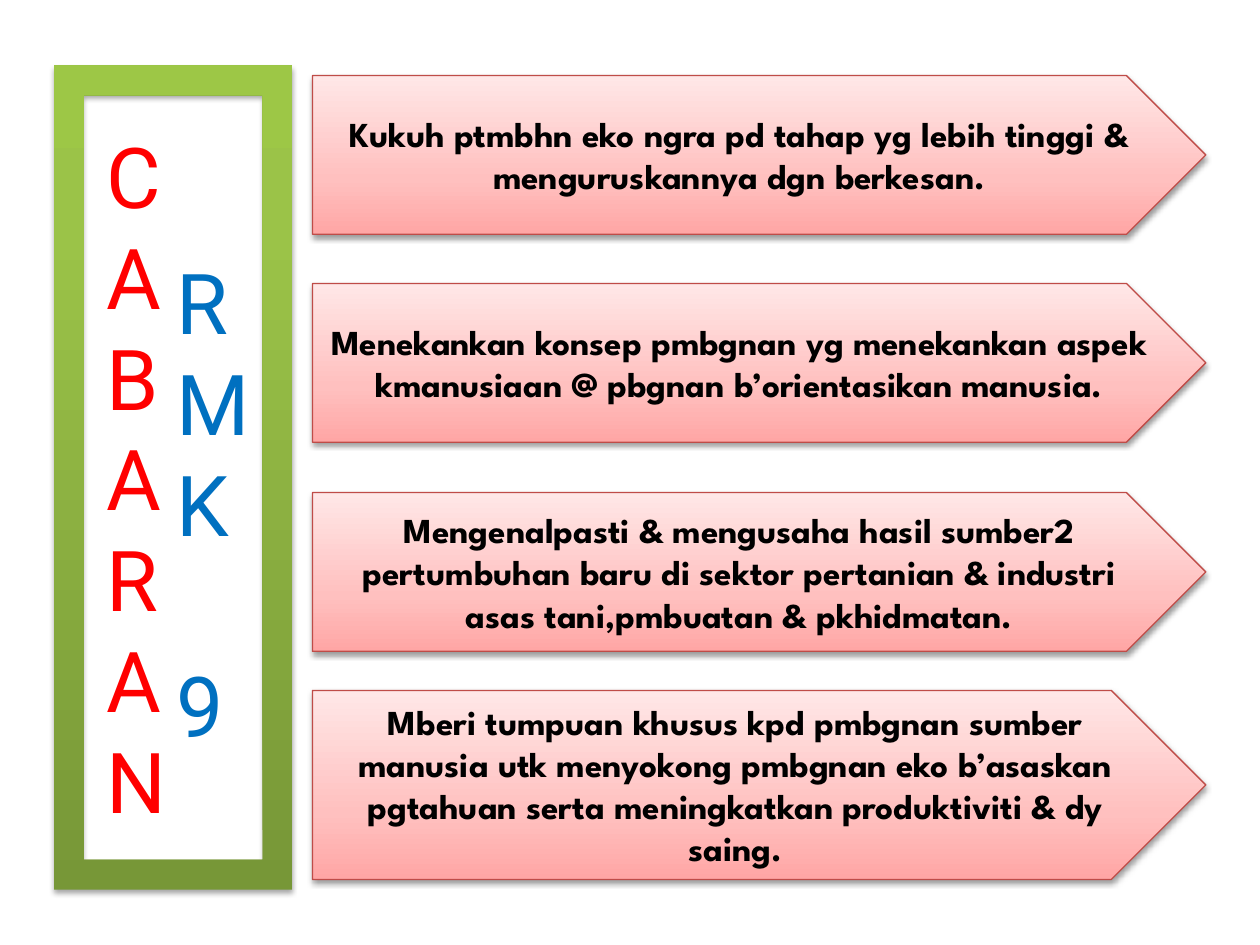
from copy import deepcopy

from lxml import etree
from pptx import Presentation
from pptx.dml.color import RGBColor
from pptx.enum.shapes import MSO_SHAPE
from pptx.enum.text import MSO_ANCHOR, MSO_AUTO_SIZE, PP_ALIGN
from pptx.oxml.ns import qn
from pptx.util import Inches, Pt

FRAME = MSO_SHAPE.FRAME
PENTAGON = MSO_SHAPE.PENTAGON
MIDDLE = MSO_ANCHOR.MIDDLE
GROW = MSO_AUTO_SIZE.SHAPE_TO_FIT_TEXT
CENTER = PP_ALIGN.CENTER

BLACK = RGBColor(0x00, 0x00, 0x00)
RED = RGBColor(0xFF, 0x00, 0x00)
BLUE = RGBColor(0x00, 0x70, 0xC0)
OUTLINE = RGBColor(0xBF, 0x4C, 0x48)
GREENS = [
    (0, RGBColor(0x77, 0x97, 0x37)),
    (0.8, RGBColor(0x9B, 0xC3, 0x48)),
    (1, RGBColor(0x9D, 0xC7, 0x46)),
]
PINKS = [
    (0, RGBColor(0xFF, 0xA6, 0xA5)),
    (0.35, RGBColor(0xFF, 0xC0, 0xBF)),
    (1, RGBColor(0xFF, 0xE7, 0xE7)),
]

LETTER_FONT = "Roboto"
CHALLENGE_FONT = "League Spartan"
LETTER_LINE = Pt(57.5)

CHALLENGES = [
    (0.6, 1.26, "Kukuh ptmbhn eko ngra pd tahap yg lebih tinggi & "
                "menguruskannya dgn berkesan."),
    (2.25, 1.26, "Menekankan konsep pmbgnan yg menekankan aspek "
                 "kmanusiaan @ pbgnan b’orientasikan manusia."),
    (3.91, 1.26, "Mengenalpasti & mengusaha hasil sumber2 pertumbuhan baru "
                 "di sektor pertanian & industri asas tani,pmbuatan & "
                 "pkhidmatan."),
    (5.48, 1.5, "Mberi tumpuan khusus kpd pmbgnan sumber manusia utk "
                "menyokong pmbgnan eko b’asaskan pgtahuan serta "
                "meningkatkan produktiviti & dy saing."),
]


def set_gradient(sp, stops):
    sp.fill.gradient()
    sp.fill.gradient_angle = 90
    gs_lst = sp._element.spPr.find(".//" + qn("a:gsLst"))
    while len(gs_lst) < len(stops):
        gs_lst.append(deepcopy(gs_lst[0]))
    for stop, (position, color) in zip(sp.fill.gradient_stops, stops):
        stop.position = position
        stop.color.rgb = color


def set_shadow(sp, distance, opacity):
    sp.shadow.inherit = False
    effects = sp._element.spPr.find(qn("a:effectLst"))
    shadow = etree.SubElement(
        effects, qn("a:outerShdw"), blurRad=str(Pt(3.1)),
        dist=str(Pt(distance)), dir="5400000", rotWithShape="0")
    color = etree.SubElement(shadow, qn("a:srgbClr"), val=str(BLACK))
    etree.SubElement(color, qn("a:alpha"), val=str(opacity * 1000))


def add_frame(s):
    sp = s.shapes.add_shape(FRAME, Inches(0.43), Inches(0.52),
                            Inches(1.89), Inches(6.54))
    set_gradient(sp, GREENS)
    sp.line.fill.background()
    set_shadow(sp, 1.8, 35)


def add_letters(s, left, top, width, height, letters, color):
    tf = s.shapes.add_textbox(Inches(left), Inches(top),
                              Inches(width), Inches(height)).text_frame
    tf.word_wrap = False
    tf.auto_size = GROW
    tf.text = "\n".join(letters)
    for p in tf.paragraphs:
        p.font.name = LETTER_FONT
        p.font.size = Pt(48)
        p.font.color.rgb = color
    return tf


def add_challenge(s, top, height, text):
    sp = s.shapes.add_shape(PENTAGON, Inches(2.48), Inches(top),
                            Inches(7.09), Inches(height))
    set_gradient(sp, PINKS)
    sp.line.color.rgb = OUTLINE
    sp.line.width = Pt(0.75)
    set_shadow(sp, 1.6, 38)
    tf = sp.text_frame
    tf.word_wrap = True
    tf.vertical_anchor = MIDDLE
    tf.text = text
    p = tf.paragraphs[0]
    p.alignment = CENTER
    p.font.name = CHALLENGE_FONT
    p.font.size = Pt(20)
    p.font.bold = True
    p.font.color.rgb = BLACK


def main():
    prs = Presentation()
    prs.slide_width = Inches(10)
    prs.slide_height = Inches(7.5)
    s = prs.slides.add_slide(prs.slide_layouts[6])
    add_frame(s)
    add_letters(s, 0.75, 0.94, 0.68, 6.56, "CABARAN", RED)
    plan = add_letters(s, 1.3, 1.94, 0.72, 4.14, "RMK9", BLUE)
    plan.paragraphs[-1].space_before = LETTER_LINE
    for top, height, text in CHALLENGES:
        add_challenge(s, top, height, text)
    prs.save("out.pptx")


if __name__ == "__main__":
    main()
